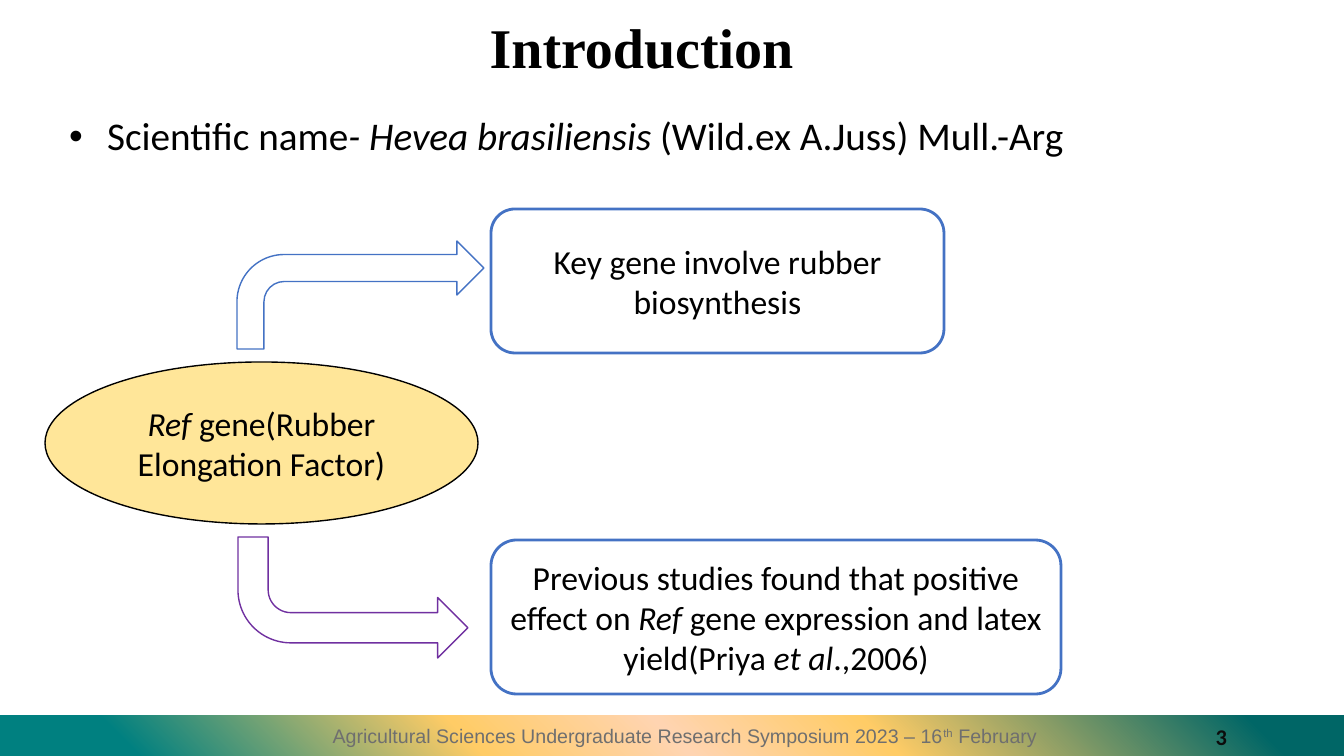
from dataclasses import dataclass

from lxml.etree import SubElement
from pptx import Presentation
from pptx.dml.color import RGBColor
from pptx.enum.shapes import MSO_SHAPE
from pptx.enum.text import MSO_ANCHOR, MSO_AUTO_SIZE, PP_ALIGN
from pptx.oxml import parse_xml
from pptx.oxml.ns import nsdecls, qn
from pptx.util import Pt

EMU_PER_PX = 914400 / 100.8


@dataclass(frozen=True)
class Theme:
    """Colours, fonts and type sizes of the slide."""
    ink: str = "000000"
    muted: str = "6F6F6F"
    number: str = "0C0C0C"
    paper: str = "FFFFFF"
    blue: str = "4472C4"
    purple: str = "7030A0"
    gold: str = "FFE699"
    band: tuple = ((0, "008080"), (10, "008080"), (35, "FFCC66"), (50, "FFD4B1"),
                   (65, "FFCC66"), (93, "006666"), (100, "006666"))
    heading_font: str = "Times New Roman"
    body_font: str = "Calibri"
    footer_font: str = "Arial"
    title_size: int = 40
    body_size: int = 28
    label_size: int = 24
    number_size: int = 16
    footer_size: int = 14


THEME = Theme()


@dataclass(frozen=True)
class Box:
    """A rectangle in px."""
    left: int
    top: int
    width: int
    height: int

    def inside(self, left, top, width, height):
        """Return a box offset from this one's corner."""
        return Box(self.left + left, self.top + top, width, height)

    def emu(self):
        """Return the four lengths in EMU."""
        return [px(n) for n in (self.left, self.top, self.width, self.height)]


def px(length):
    """Turn px into EMU."""
    return round(length * EMU_PER_PX)


def place(shape, box):
    """Move a shape into a box."""
    shape.left, shape.top, shape.width, shape.height = box.emu()


def write(shape, spans, size, font=THEME.body_font, colour=THEME.ink,
          bold=False, align=PP_ALIGN.CENTER, anchor=MSO_ANCHOR.MIDDLE):
    """Write (text, italic) spans as one paragraph and return it."""
    frame = shape.text_frame
    frame.word_wrap = True
    frame.auto_size = MSO_AUTO_SIZE.NONE
    frame.vertical_anchor = anchor
    para = frame.paragraphs[0]
    para.alignment = align
    for text, italic in spans:
        span = para.add_run()
        span.text = text
        span.font.name = font
        span.font.size = Pt(size)
        span.font.bold = bold
        span.font.italic = italic
        span.font.color.rgb = RGBColor.from_string(colour)
    return para


def add_figure(page, kind, box, fill, line, weight):
    """Add a filled and outlined preset shape."""
    shape = page.shapes.add_shape(kind, *box.emu())
    shape.shadow.inherit = False
    shape.fill.solid()
    shape.fill.fore_color.rgb = RGBColor.from_string(fill)
    shape.line.color.rgb = RGBColor.from_string(line)
    shape.line.width = Pt(weight)
    return shape


def add_title(page, box):
    """Fill the title placeholder."""
    title = page.shapes.title
    place(title, box)
    para = write(title, [("Introduction", False)], THEME.title_size,
                 THEME.heading_font, bold=True)
    para.line_spacing = 0.9


def add_body(page, box):
    """Fill the body placeholder with its bullet."""
    body = page.placeholders[1]
    place(body, box)
    spans = [("Scientific name", False), ("- Hevea brasiliensis ", True),
             ("(Wild.ex A.Juss) Mull.-Arg", False)]
    para = write(body, spans, THEME.body_size, align=PP_ALIGN.LEFT, anchor=MSO_ANCHOR.TOP)
    para.line_spacing = 0.9
    para.space_before = Pt(0)
    properties = para._p.get_or_add_pPr()
    properties.set("marL", str(px(38)))
    properties.set("indent", str(-px(38)))
    SubElement(properties, qn("a:buFont")).set("typeface", "Arial")
    SubElement(properties, qn("a:buChar")).set("char", "•")


def add_diagram(page, box):
    """Draw the gene ellipse with arrows to its two findings."""
    gene = add_figure(page, MSO_SHAPE.OVAL, box.inside(0, 153, 433, 162),
                      THEME.gold, THEME.ink, 1)
    para = write(gene, [("Ref", True), (" gene(Rubber Elongation Factor)", False)],
                 THEME.label_size)
    outline = parse_xml(f'<a:ln {nsdecls("a")} w="9525"><a:solidFill>'
                        f'<a:srgbClr val="{THEME.purple}"/></a:solidFill></a:ln>')
    para.runs[0]._r.get_or_add_rPr().insert(0, outline)

    findings = (
        (box.inside(446, 0, 453, 144),
         [("Key gene involve rubber biosynthesis", False)]),
        (box.inside(446, 331, 570, 154),
         [("Previous studies found that positive effect on ", False), ("Ref", True),
          (" gene expression and latex yield(Priya ", False), ("et al", True),
          (".,2006)", False)]),
    )
    for place_box, spans in findings:
        finding = add_figure(page, MSO_SHAPE.ROUNDED_RECTANGLE, place_box,
                             THEME.paper, THEME.blue, 2)
        write(finding, spans, THEME.label_size)

    add_figure(page, MSO_SHAPE.BENT_ARROW, box.inside(192, 32, 247, 108),
               THEME.paper, THEME.blue, 1)
    lower_arrow = add_figure(page, MSO_SHAPE.BENT_ARROW, box.inside(193, 328, 230, 121),
                             THEME.paper, THEME.purple, 1)
    lower_arrow._element.spPr.find(qn("a:xfrm")).set("flipV", "1")


def add_footer(page, box):
    """Draw the gradient band with the event name and page number."""
    band = add_figure(page, MSO_SHAPE.RECTANGLE, box, THEME.paper, THEME.paper, 1)
    band.line.fill.background()
    stops = "".join(f'<a:gs pos="{position * 1000}"><a:srgbClr val="{colour}"/></a:gs>'
                    for position, colour in THEME.band)
    gradient = parse_xml(
        f'<a:gradFill {nsdecls("a")} rotWithShape="1"><a:gsLst>{stops}</a:gsLst>'
        '<a:path path="circle"><a:fillToRect t="100000" r="100000"/></a:path></a:gradFill>')
    properties = band._element.spPr
    properties.replace(properties.find(qn("a:solidFill")), gradient)

    event = page.shapes.add_textbox(*box.inside(130, 1, 1115, 40).emu())
    spans = [("Agricultural Sciences Undergraduate Research Symposium 2023 – 16", False),
             ("th", False), (" February ", False)]
    para = write(event, spans, THEME.footer_size, THEME.footer_font, THEME.muted)
    para.runs[1]._r.get_or_add_rPr().set("baseline", "30000")

    number = page.shapes.add_textbox(*box.inside(935, 2, 302, 40).emu())
    write(number, [("3", False)], THEME.number_size, colour=THEME.number,
          bold=True, align=PP_ALIGN.RIGHT)


def main():
    """Build and save the slide."""
    deck = Presentation()
    deck.slide_width, deck.slide_height = px(1344), px(756)
    page = deck.slides.add_slide(deck.slide_layouts[1])
    add_footer(page, Box(0, 715, 1344, 41))
    add_title(page, Box(130, -15, 1023, 130))
    add_body(page, Box(59, 112, 1245, 526))
    add_diagram(page, Box(45, 209, 1016, 485))
    deck.save("out.pptx")


if __name__ == "__main__":
    main()
